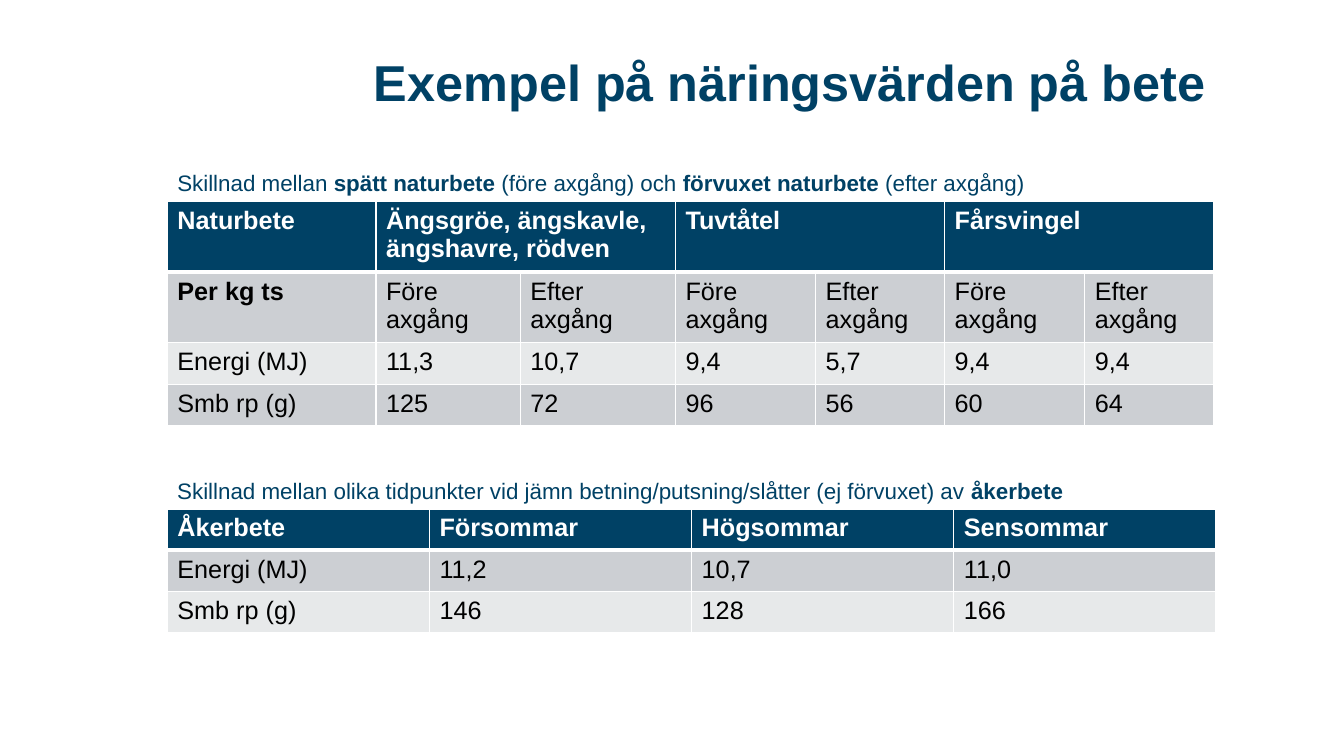
from lxml import etree
from pptx import Presentation
from pptx.dml.color import RGBColor
from pptx.enum import text
from pptx.oxml import ns
from pptx.util import Inches, Pt

NAVY = RGBColor(0x00, 0x41, 0x65)
WHITE = RGBColor(0xFF, 0xFF, 0xFF)
BLACK = RGBColor(0x00, 0x00, 0x00)
DARK_BAND = RGBColor(0xCC, 0xCF, 0xD3)
LIGHT_BAND = RGBColor(0xE7, 0xE9, 0xEA)
LEFT, WIDTH = 1.66, 10.4


def add_text(frame, runs, size, color):
    """Fill the first paragraph with (wording, bold) runs and return it."""
    paragraph = frame.paragraphs[0]
    for wording, bold in runs:
        run = paragraph.add_run()
        run.text = wording
        run.font.name = "Arial"
        run.font.size = Pt(size)
        run.font.bold = bold
        run.font.color.rgb = color
    return paragraph


def set_borders(cell, row_index):
    """Draw thin white borders, with a thick one under the header row."""
    thick_side = {0: "lnB", 1: "lnT"}.get(row_index)
    properties = cell._tc.get_or_add_tcPr()
    for side in ("lnL", "lnR", "lnT", "lnB"):
        width = Pt(3 if side == thick_side else 1)
        line = etree.SubElement(properties, ns.qn(f"a:{side}"), w=str(width))
        fill = etree.SubElement(line, ns.qn("a:solidFill"))
        etree.SubElement(fill, ns.qn("a:srgbClr"), val=str(WHITE))


presentation = Presentation()
presentation.slide_width = Inches(13.33)
presentation.slide_height = Inches(7.5)
slide = presentation.slides.add_slide(presentation.slide_layouts[6])

title = slide.shapes.add_textbox(Inches(LEFT), Inches(0.33), Inches(WIDTH), Inches(1.04))
title.text_frame.word_wrap = True
title.text_frame.vertical_anchor = text.MSO_ANCHOR.MIDDLE
paragraph = add_text(title.text_frame, [("Exempel på näringsvärden på bete", True)], 36, NAVY)
paragraph.alignment = text.PP_ALIGN.RIGHT
paragraph.line_spacing = 0.9

captions = [
    (1.63, 8.82, [
        ("Skillnad mellan ", False),
        ("spätt naturbete ", True),
        ("(före axgång) och ", False),
        ("förvuxet naturbete ", True),
        ("(efter axgång)", False),
    ]),
    (4.68, 9.04, [
        ("Skillnad mellan olika tidpunkter vid jämn betning/putsning/slåtter (ej förvuxet) av ", False),
        ("åkerbete", True),
    ]),
]
for top, width, runs in captions:
    caption = slide.shapes.add_textbox(Inches(LEFT), Inches(top), Inches(width), Inches(0.37))
    caption.text_frame.word_wrap = True
    add_text(caption.text_frame, runs, 16, NAVY)

# None marks a cell that is merged into the one on its left
natural_pasture = [
    ["Naturbete", "Ängsgröe, ängskavle, ängshavre, rödven", None, "Tuvtåtel", None, "Fårsvingel", None],
    ["Per kg ts"] + ["Före axgång", "Efter axgång"] * 3,
    ["Energi (MJ)", "11,3", "10,7", "9,4", "5,7", "9,4", "9,4"],
    ["Smb rp (g)", "125", "72", "96", "56", "60", "64"],
]
field_pasture = [
    ["Åkerbete", "Försommar", "Högsommar", "Sensommar"],
    ["Energi (MJ)", "11,2", "10,7", "11,0"],
    ["Smb rp (g)", "146", "128", "166"],
]
tables = [
    (2, natural_pasture, [2.07, 1.43, 1.54, 1.39, 1.28, 1.39, 1.28], [0.7, 0.7, 0.41, 0.41]),
    (5.05, field_pasture, [WIDTH / 4] * 4, [0.41] * 3),
]
for top, rows, widths, heights in tables:
    table = slide.shapes.add_table(
        len(rows), len(widths), Inches(LEFT), Inches(top), Inches(WIDTH), Inches(sum(heights))
    ).table
    for column, width in zip(table.columns, widths):
        column.width = Inches(width)
    for row_index, (values, height) in enumerate(zip(rows, heights)):
        table.rows[row_index].height = Inches(height)
        is_header = row_index == 0
        band = NAVY if is_header else DARK_BAND if row_index % 2 else LIGHT_BAND
        for column_index, value in enumerate(values):
            cell = table.cell(row_index, column_index)
            set_borders(cell, row_index)
            cell.fill.solid()
            cell.fill.fore_color.rgb = band
            if value is None:
                table.cell(row_index, column_index - 1).merge(cell)
            else:
                bold = is_header or value == "Per kg ts"
                add_text(cell.text_frame, [(value, bold)], 18, WHITE if is_header else BLACK)

presentation.save("out.pptx")
